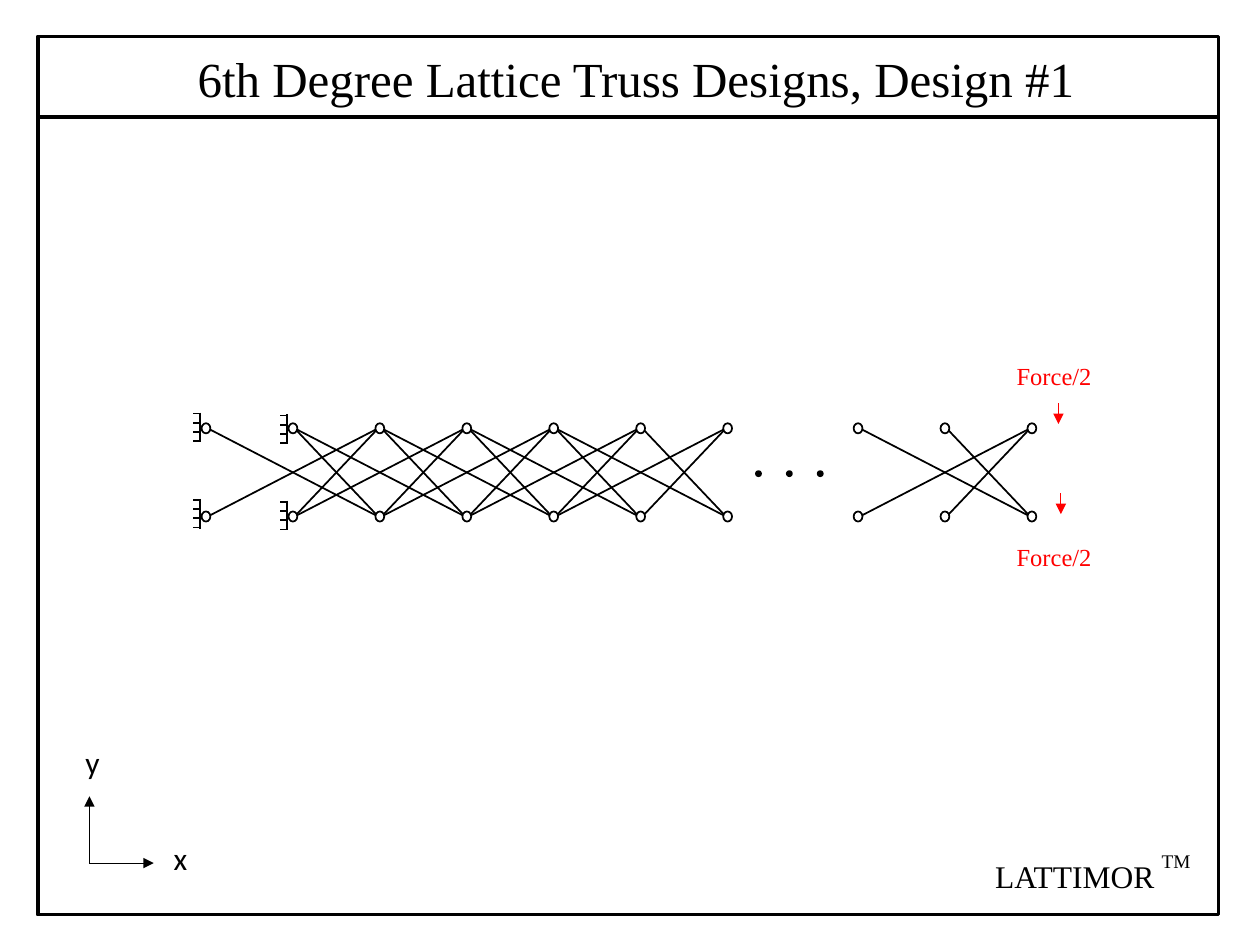
"""Draw the sixth degree lattice truss slide, with places as percent of the page."""
from dataclasses import dataclass
from itertools import product

from lxml import etree
from pptx import Presentation, util as u
from pptx.dml.color import RGBColor
from pptx.enum import shapes, text
from pptx.oxml.ns import qn


@dataclass(frozen=True)
class Theme:
    ink: str = "000000"
    paper: str = "FFFFFF"
    load: str = "FF0000"
    serif: str = "Times New Roman"
    sans: str = "Calibri"
    title: float = 28
    body: float = 18
    note: float = 14
    mark: float = 11
    thick: float = 2
    thin: float = 1
    hair: float = 0.5


@dataclass(frozen=True)
class Grid:
    left: float = 16.35
    top: float = 45.33
    pitch: float = 6.9
    drop: float = 9.33

    def x(self, col: float) -> float:
        return self.left + self.pitch * col

    def y(self, row: float) -> float:
        return self.top + self.drop * row


@dataclass(frozen=True)
class Brace:
    span: int
    starts: tuple
    over_x: float
    over_y: float


@dataclass(frozen=True)
class Label:
    words: str
    box: tuple
    size: float
    font: str
    color: str


LOOK = Theme()
GRID = Grid()
TAIL = 7.5
BRACES = (
    Brace(2, (*range(5), TAIL), 0.05, 0.13),
    Brace(1, (*range(1, 6), TAIL + 1), 0.15, 0.4),
)
JOINTS = (*range(7), *(TAIL + step for step in range(3)))
FIXED = (0, 1)
ROWS = (0, 1)
LABELS = (
    Label("6th Degree Lattice Truss Designs, Design #1", (14.7, 4.4, 72.1, 7.6),
          LOOK.title, LOOK.serif, LOOK.ink),
    Label("Force/2", (79.7, 37.47, 9.6, 4.53), LOOK.note, LOOK.serif, LOOK.load),
    Label("Force/2", (79.7, 56.67, 9.6, 4.53), LOOK.note, LOOK.serif, LOOK.load),
    Label("x", (12.8, 88.13, 3.1, 5.33), LOOK.body, LOOK.sans, LOOK.ink),
    Label("y", (5.8, 78, 3.1, 5.33), LOOK.body, LOOK.sans, LOOK.ink),
    Label("LATTIMOR", (78, 90, 15.2, 5.33), LOOK.body, LOOK.serif, LOOK.ink),
    Label("TM", (91.2, 88.4, 5.1, 5.33), LOOK.mark, LOOK.serif, LOOK.ink),
)


class Page:
    """A blank slide that takes places as percent of its size."""

    def __init__(self) -> None:
        self.deck = Presentation()
        self.deck.slide_width, self.deck.slide_height = u.Inches(10), u.Inches(7.5)
        self.tree = self.deck.slides.add_slide(self.deck.slide_layouts[6]).shapes

    def place(self, *shares: float) -> list[int]:
        sides = (self.deck.slide_width, self.deck.slide_height)
        return [round(share * sides[n % 2] / 100) for n, share in enumerate(shares)]

    def line(self, start: tuple, end: tuple, width: float = LOOK.thin,
             color: str = LOOK.ink, arrow: bool = False) -> None:
        link = self.tree.add_connector(
            shapes.MSO_CONNECTOR.STRAIGHT, *self.place(*start, *end))
        link.line.width = u.Pt(width)
        link.line.color.rgb = RGBColor.from_string(color)
        props = link._element.spPr
        if arrow:
            etree.SubElement(props.find(qn("a:ln")), qn("a:tailEnd"), type="triangle")
        etree.SubElement(props, qn("a:effectLst"))

    def shape(self, kind: shapes.MSO_SHAPE, box: tuple, fill: str | None = None,
              width: float = LOOK.thin) -> None:
        form = self.tree.add_shape(kind, *self.place(*box))
        form.shadow.inherit = False
        form.line.width = u.Pt(width)
        form.line.color.rgb = RGBColor.from_string(LOOK.ink)
        if fill is None:
            form.fill.background()
        else:
            form.fill.solid()
            form.fill.fore_color.rgb = RGBColor.from_string(fill)

    def dot(self, x: float, y: float, wide: float, high: float, fill: str) -> None:
        self.shape(shapes.MSO_SHAPE.OVAL, (x - wide / 2, y - high / 2, wide, high), fill)

    def label(self, item: Label) -> None:
        frame = self.tree.add_textbox(*self.place(*item.box)).text_frame
        frame.word_wrap = True
        frame.vertical_anchor = text.MSO_ANCHOR.MIDDLE
        frame.text = item.words
        font = frame.paragraphs[0].font
        font.name, font.size = item.font, u.Pt(item.size)
        font.color.rgb = RGBColor.from_string(item.color)


def draw_frame(page: Page) -> None:
    page.shape(shapes.MSO_SHAPE.RECTANGLE, (3, 3.87, 93.7, 92.93), width=LOOK.thick)
    page.line((3, 12.4), (96.7, 12.4), LOOK.thick)


def draw_brace(page: Page, brace: Brace) -> None:
    high, low = GRID.y(0) - brace.over_y, GRID.y(1) + brace.over_y
    for col in brace.starts:
        left = GRID.x(col) - brace.over_x
        right = GRID.x(col + brace.span) + brace.over_x
        page.line((left, high), (right, low))
        page.line((left, low), (right, high))


def draw_wall(page: Page, col: int, row: int) -> None:
    stem, mid = GRID.x(col) - 0.45, GRID.y(row) - 0.1 + 0.2 * (col - row)
    page.line((stem, mid - 1.57), (stem, mid + 1.57))
    for tooth in range(4):
        y = mid + 0.98 * (tooth - 1.5)
        page.line((stem, y), (stem - 0.6, y))


def draw_truss(page: Page) -> None:
    for brace in BRACES:
        draw_brace(page, brace)
    for col, row in product(JOINTS, ROWS):
        page.dot(GRID.x(col), GRID.y(row), 0.7, 1.07, LOOK.paper)
    for col, row in product(FIXED, ROWS):
        draw_wall(page, col, row)
    for step in range(3):
        page.dot(60.2 + 2.45 * step, GRID.y(0.5) + 0.13, 0.4, 0.53, LOOK.ink)


def draw_arrows(page: Page) -> None:
    for x, y in ((84, 42.67), (84.2, 52.2)):
        page.line((x, y), (x, y + 2.2), LOOK.hair, LOOK.load, True)
    for end in ((12.2, 91.33), (7.1, 84.27)):
        page.line((7.1, 91.33), end, LOOK.hair, arrow=True)


def main() -> None:
    page = Page()
    draw_frame(page)
    draw_truss(page)
    draw_arrows(page)
    for item in LABELS:
        page.label(item)
    page.deck.save("out.pptx")


if __name__ == "__main__":
    main()
